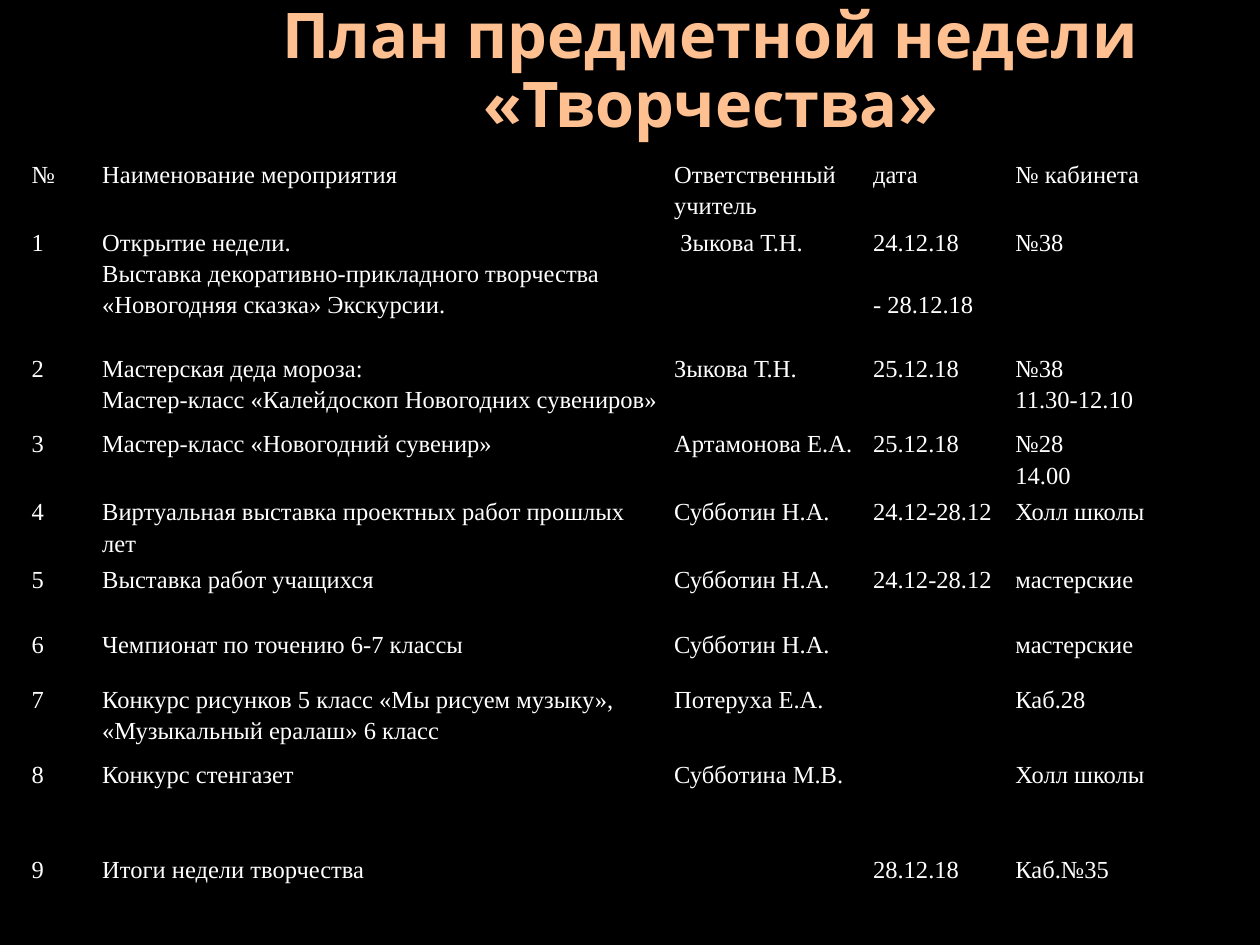
from lxml.etree import SubElement
from pptx import Presentation
from pptx.dml.color import RGBColor
from pptx.enum.text import MSO_ANCHOR, PP_ALIGN
from pptx.oxml.ns import qn
from pptx.util import Cm, Pt

COLUMN_WIDTHS = [1.42, 11.53, 4.01, 2.87, 4.57]
ROW_HEIGHTS = [1.37, 2.54, 1.52, 1.37, 1.14, 1.3, 1.12, 1.52, 1.02, 0.89, 0.94]

# Each line of a cell is a paragraph
PLAN = [
    ["№", "Наименование мероприятия", "Ответственный учитель", "дата", "№ кабинета"],
    ["1", "Открытие недели.\nВыставка декоративно-прикладного творчества "
          "«Новогодняя сказка» Экскурсии.",
     " Зыкова Т.Н.", "24.12.18\n- 28.12.18", "№38"],
    ["2", "Мастерская деда мороза:\nМастер-класс «Калейдоскоп Новогодних сувениров»",
     "Зыкова Т.Н.", "25.12.18", "№38\n11.30-12.10"],
    ["3", "Мастер-класс «Новогодний сувенир»", "Артамонова Е.А.", "25.12.18", "№28\n14.00"],
    ["4", "Виртуальная выставка проектных работ прошлых лет",
     "Субботин Н.А.", "24.12-28.12", "Холл школы"],
    ["5", "Выставка работ учащихся", "Субботин Н.А.", "24.12-28.12", "мастерские"],
    ["6", "Чемпионат по точению 6-7 классы", "Субботин Н.А.", "", "мастерские"],
    ["7", "Конкурс рисунков 5 класс «Мы рисуем музыку», «Музыкальный ералаш» 6 класс",
     "Потеруха Е.А.", "", "Каб.28"],
    ["8", "Конкурс стенгазет", "Субботина М.В.", "", "Холл школы"],
    ["", "", "", "", ""],
    ["9", "Итоги недели творчества", "", "28.12.18", "Каб.№35"],
]


def color(value):
    return RGBColor.from_string(value)


def apply_format(target, values):
    for name, value in values.items():
        setattr(target, name, value)


class SlideBuilder:
    title_font = {"name": "Open Sans", "bold": True}
    title_color = "FFC091"
    cell_font = {"name": "Times New Roman", "size": Pt(14)}
    cell_color = "FFFFFF"
    cell_margins = {"margin_left": Cm(0.13), "margin_right": Cm(0.13),
                    "margin_top": 0, "margin_bottom": 0}
    black = "000000"

    def __init__(self, slide):
        self.slide = slide

    def background(self):
        fill = self.slide.background.fill
        fill.solid()
        fill.fore_color.rgb = color(self.black)

    def title(self, left, top, width, height, spans):
        box = self.slide.shapes.add_textbox(Cm(left), Cm(top), Cm(width), Cm(height))
        apply_format(box.text_frame,
                     {"word_wrap": True, "vertical_anchor": MSO_ANCHOR.MIDDLE})
        para = box.text_frame.paragraphs[0]
        apply_format(para, {"alignment": PP_ALIGN.CENTER, "line_spacing": 0.9})
        for text, size in spans:
            span = para.add_run()
            span.text = text
            apply_format(span.font, {**self.title_font, "size": Pt(size)})
            span.font.color.rgb = color(self.title_color)

    def borders(self, cell):
        properties = cell._tc.get_or_add_tcPr()
        for side in ("a:lnL", "a:lnR", "a:lnT", "a:lnB"):
            line = SubElement(properties, qn(side), w=str(Pt(1)))
            fill = SubElement(line, qn("a:solidFill"))
            SubElement(fill, qn("a:srgbClr"), val=self.black)

    def cell(self, cell, text):
        apply_format(cell, self.cell_margins)
        self.borders(cell)
        cell.fill.background()
        cell.text = text
        for para in cell.text_frame.paragraphs:
            para.line_spacing = 1.15
            apply_format(para.font, self.cell_font)
            for span in para.runs:
                apply_format(span.font, self.cell_font)
                span.font.color.rgb = color(self.cell_color)

    def table(self, left, top, widths, heights, rows):
        table = self.slide.shapes.add_table(
            len(rows), len(widths), Cm(left), Cm(top),
            Cm(sum(widths)), Cm(sum(heights))).table
        apply_format(table, {"first_row": False, "horz_banding": False})
        for column, width in zip(table.columns, widths):
            column.width = Cm(width)
        for row, height, texts in zip(table.rows, heights, rows):
            row.height = Cm(height)
            for cell, text in zip(row.cells, texts):
                self.cell(cell, text)
        return table


def main():
    deck = Presentation()
    apply_format(deck, {"slide_width": Cm(25.4), "slide_height": Cm(19.05)})
    page = SlideBuilder(deck.slides.add_slide(deck.slide_layouts[6]))
    page.background()

    # Heading
    page.title(2.69, 0.41, 23.27, 2.11,
               [("План предметной недели «Творчества", 36), ("»", 36.9)])

    # Schedule, with a one-line gap inside the opening dates
    table = page.table(0.51, 3.18, COLUMN_WIDTHS, ROW_HEIGHTS, PLAN)
    table.cell(1, 3).text_frame.paragraphs[1].space_before = Pt(17.7)

    deck.save("out.pptx")


if __name__ == "__main__":
    main()
